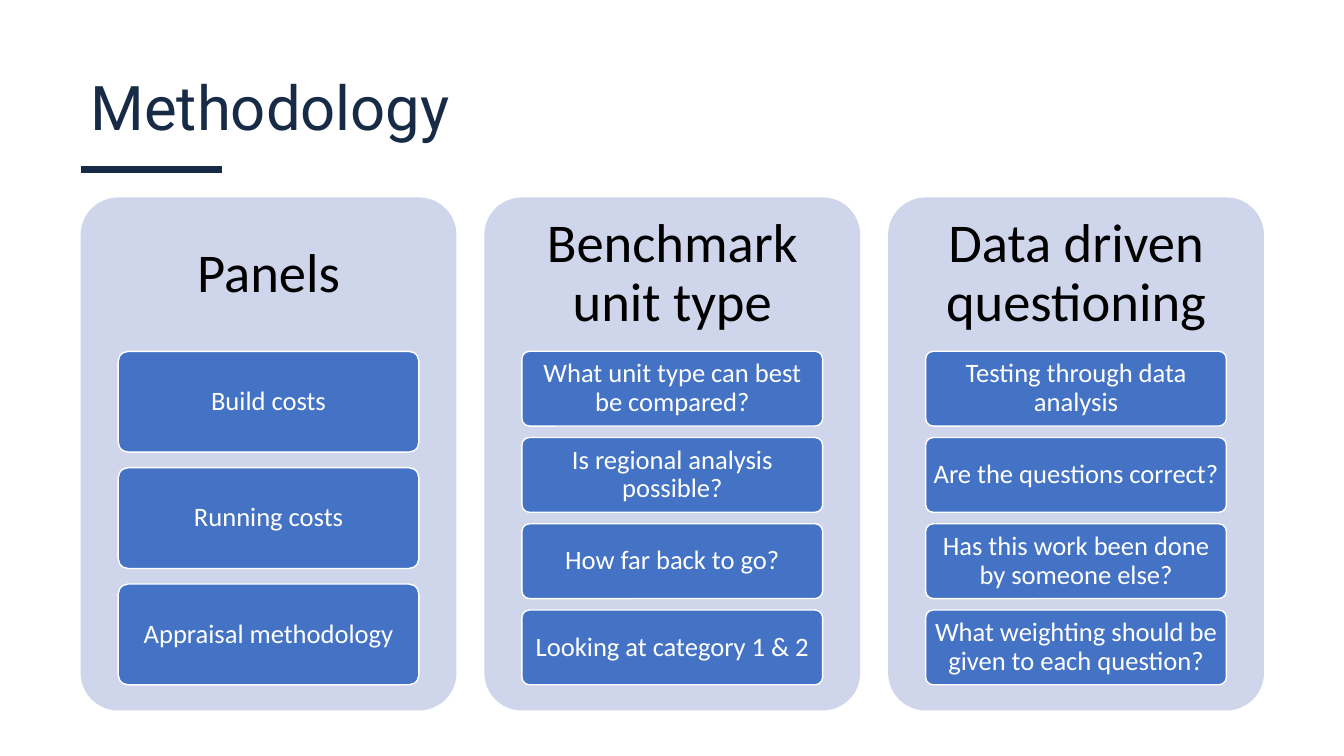
import pptx
import pptx.dml.color
import pptx.enum.shapes
import pptx.enum.text
import pptx.oxml.ns
import pptx.util
import lxml.etree

Pt = pptx.util.Pt
ROUNDED = pptx.enum.shapes.MSO_SHAPE.ROUNDED_RECTANGLE
ALIGN = pptx.enum.text.PP_ALIGN
ANCHOR = pptx.enum.text.MSO_ANCHOR

NAVY, PANEL_FILL, CARD_FILL = "172B46", "CFD5EA", "4472C4"
BLACK, WHITE = "000000", "FFFFFF"

COLUMNS = {
    "Panels": ["Build costs", "Running costs", "Appraisal methodology"],
    "Benchmark unit type": [
        "What unit type can best be compared?",
        "Is regional analysis possible?",
        "How far back to go?",
        "Looking at category 1 & 2",
    ],
    "Data driven questioning": [
        "Testing through data analysis",
        "Are the questions correct?",
        "Has this work been done by someone else?",
        "What weighting should be given to each question?",
    ],
}


def color(value):
    return pptx.dml.color.RGBColor.from_string(value)


def write(shape, text, font, size, ink, align, anchor, inset_x, inset_y):
    """Fill a shape with one formatted paragraph."""
    frame = shape.text_frame
    frame_format = {
        "word_wrap": True, "vertical_anchor": anchor,
        "margin_left": Pt(inset_x), "margin_right": Pt(inset_x),
        "margin_top": Pt(inset_y), "margin_bottom": Pt(inset_y),
    }
    for name, value in frame_format.items():
        setattr(frame, name, value)
    paragraph = frame.paragraphs[0]
    paragraph.alignment = align
    paragraph.line_spacing = 0.9
    run = paragraph.add_run()
    run.text = text
    for name, value in {"name": font, "size": Pt(size)}.items():
        setattr(run.font, name, value)
    run.font.color.rgb = color(ink)


presentation = pptx.Presentation()
presentation.slide_width = Pt(960)
presentation.slide_height = Pt(540)
slide = presentation.slides.add_slide(presentation.slide_layouts[6])
shapes = slide.shapes

# Title and its rule
left = 57.6
title = shapes.add_textbox(Pt(left), Pt(51.8), Pt(699), Pt(89))
write(title, "Methodology", "Roboto", 44, NAVY, ALIGN.LEFT, ANCHOR.TOP, 7.2, 3.6)

rule = shapes.add_connector(
    pptx.enum.shapes.MSO_CONNECTOR.STRAIGHT, Pt(left), Pt(121), Pt(left + 101), Pt(121))
rule.line.color.rgb = color(NAVY)
rule.line.width = Pt(5)
lxml.etree.SubElement(rule._element.spPr, pptx.oxml.ns.qn("a:effectLst"))

# Panels: heading in the top 30%, cards in the next 65%
panel_top, panel_width, panel_height, panel_pitch = 141, 268.5, 366.5, 288.4
heading_height = 0.3 * panel_height
cards_height = 0.65 * panel_height
gap_ratio = 2 / 13

for column, (heading, cards) in enumerate(COLUMNS.items()):
    panel_left = left + column * panel_pitch
    panel = shapes.add_shape(
        ROUNDED, Pt(panel_left), Pt(panel_top), Pt(panel_width), Pt(panel_height))
    panel.adjustments[0] = 0.1
    panel.shadow.inherit = False
    panel.fill.solid()
    panel.fill.fore_color.rgb = color(PANEL_FILL)
    panel.line.fill.background()

    heading_box = shapes.add_textbox(
        Pt(panel_left), Pt(panel_top), Pt(panel_width), Pt(heading_height))
    write(heading_box, heading, "Calibri", 39, BLACK, ALIGN.CENTER, ANCHOR.MIDDLE, 11.5, 11.5)

    card_height = cards_height / (len(cards) + (len(cards) - 1) * gap_ratio)
    for row, text in enumerate(cards):
        card_top = panel_top + heading_height + row * card_height * (1 + gap_ratio)
        card = shapes.add_shape(
            ROUNDED, Pt(panel_left + 0.1 * panel_width), Pt(card_top),
            Pt(0.8 * panel_width), Pt(card_height))
        card.adjustments[0] = 0.1
        card.shadow.inherit = False
        card.fill.solid()
        card.fill.fore_color.rgb = color(CARD_FILL)
        card.line.color.rgb = color(WHITE)
        card.line.width = Pt(1)
        write(card, text, "Calibri", 19, WHITE, ALIGN.CENTER, ANCHOR.MIDDLE, 3, 2.8)

presentation.save("out.pptx")
